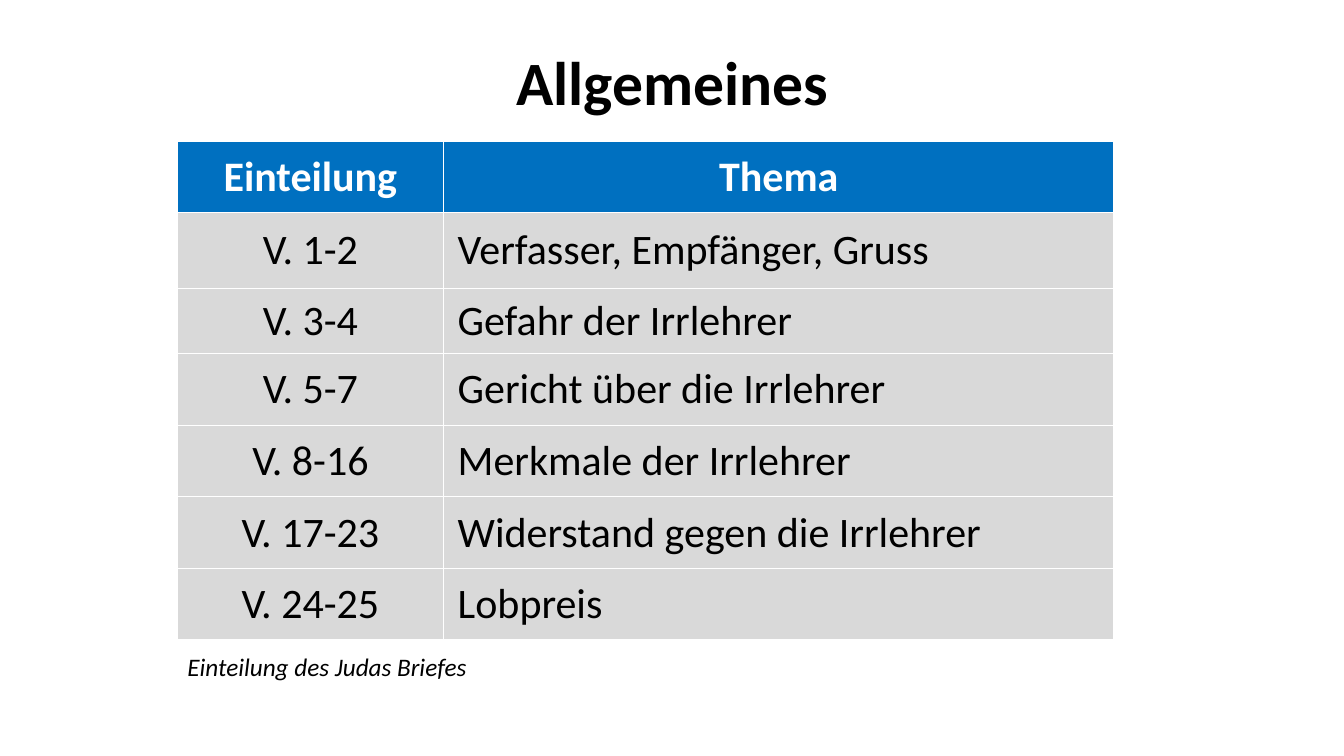
from pptx import Presentation, util as u
from pptx.dml.color import RGBColor
from pptx.enum import text as t

# Content
TITLE = "Allgemeines"
CAPTION = "Einteilung des Judas Briefes"
ROWS = [
    ("Einteilung", "Thema"),
    ("V. 1-2", "Verfasser, Empfänger, Gruss"),
    ("V. 3-4", "Gefahr der Irrlehrer"),
    ("V. 5-7", "Gericht über die Irrlehrer"),
    ("V. 8-16", "Merkmale der Irrlehrer"),
    ("V. 17-23", "Widerstand gegen die Irrlehrer"),
    ("V. 24-25", "Lobpreis"),
]

# Layout in inches
WIDTH, HEIGHT = 13.33, 7.5
LEFT, TOP = 1.76, 1.4
COLUMNS = (2.64, 6.65)
ROW_HEIGHT = 0.71
SPECIAL_HEIGHTS = {1: 0.75, 2: 0.65}
HEIGHTS = [SPECIAL_HEIGHTS.get(i, ROW_HEIGHT) for i in range(len(ROWS))]
BLUE, GREY, WHITE, BLACK = "0070C0", "D9D9D9", "FFFFFF", "000000"


def color(value):
    return RGBColor.from_string(value)


def write(frame, words, size, ink=BLACK, bold=False, italic=False,
          align=t.PP_ALIGN.LEFT, spacing=1.0):
    para = frame.paragraphs[0]
    para.alignment = align
    para.line_spacing = spacing
    span = para.add_run()
    span.text = words
    font = span.font
    font.name, font.size = "Calibri", u.Pt(size)
    font.bold, font.italic = bold, italic
    font.color.rgb = color(ink)


def add_text(page, place, words, size, wrap=True,
             anchor=t.MSO_ANCHOR.TOP, **style):
    box = page.shapes.add_textbox(*map(u.Inches, place))
    frame = box.text_frame
    frame.word_wrap = wrap
    frame.vertical_anchor = anchor
    write(frame, words, size, **style)


def add_outline_table(page):
    table = page.shapes.add_table(
        len(ROWS), len(COLUMNS), u.Inches(LEFT), u.Inches(TOP),
        u.Inches(sum(COLUMNS)), u.Inches(sum(HEIGHTS))).table
    table.horz_banding = False
    for column, width in zip(table.columns, COLUMNS):
        column.width = u.Inches(width)
    for i, (row, height) in enumerate(zip(table.rows, HEIGHTS)):
        row.height = u.Inches(height)
        header = i == 0
        for j, cell in enumerate(row.cells):
            cell.fill.solid()
            cell.fill.fore_color.rgb = color(BLUE if header else GREY)
            cell.vertical_anchor = t.MSO_ANCHOR.MIDDLE
            cell.margin_left = cell.margin_right = u.Inches(0.14)
            cell.margin_top = cell.margin_bottom = 0
            centred = header or j == 0
            write(cell.text_frame, ROWS[i][j], 30, bold=header,
                  ink=WHITE if header else BLACK,
                  align=t.PP_ALIGN.CENTER if centred else t.PP_ALIGN.LEFT)


def main():
    deck = Presentation()
    deck.slide_width, deck.slide_height = u.Inches(WIDTH), u.Inches(HEIGHT)
    page = deck.slides.add_slide(deck.slide_layouts[6])

    # Title, table and caption
    add_text(page, (0.92, 0.4, 11.5, 0.89), TITLE, 44, bold=True,
             anchor=t.MSO_ANCHOR.MIDDLE, align=t.PP_ALIGN.CENTER, spacing=0.9)
    add_outline_table(page)
    add_text(page, (LEFT, TOP + sum(HEIGHTS) + 0.06, 3, 0.4), CAPTION, 18,
             wrap=False, italic=True)
    deck.save("out.pptx")


if __name__ == "__main__":
    main()
